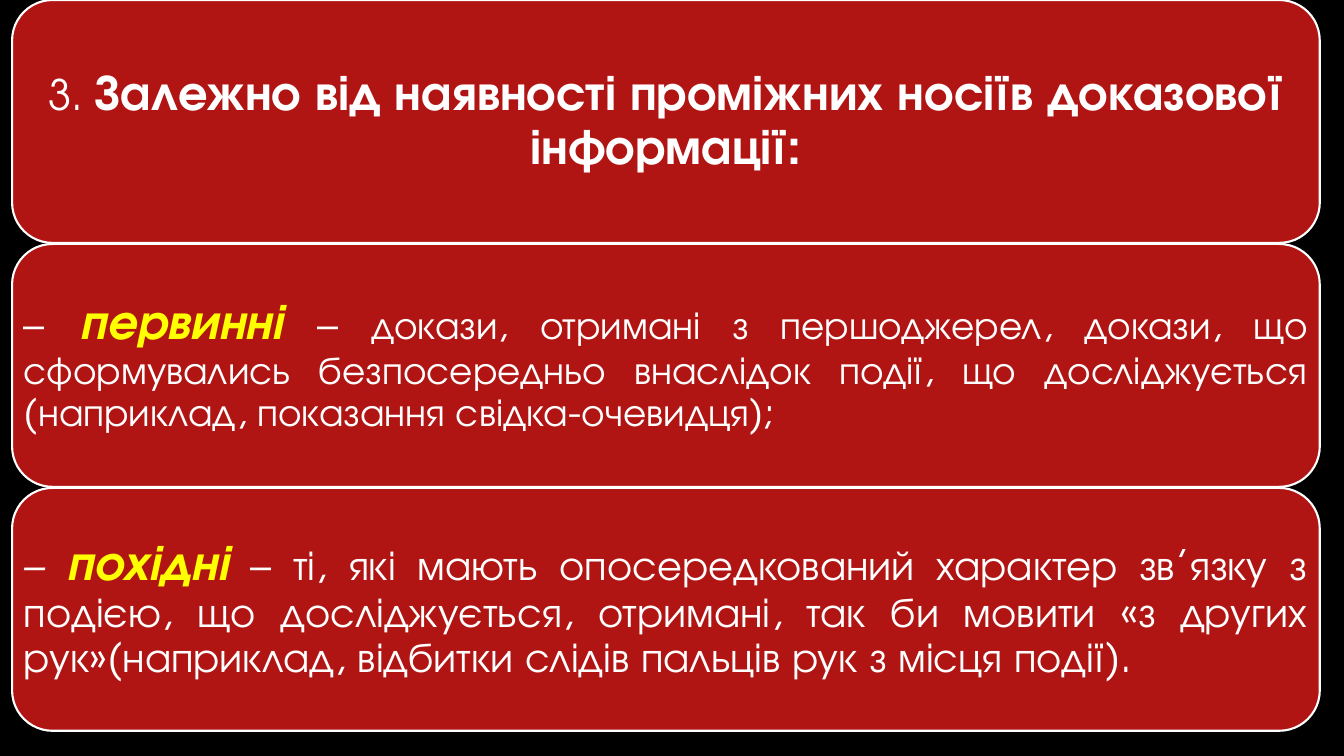
from pptx import Presentation
from pptx.dml.color import RGBColor
from pptx.enum.shapes import MSO_SHAPE
from pptx.enum.text import MSO_ANCHOR, PP_ALIGN
from pptx.util import Inches, Pt

FONT = "TeX Gyre Adventor"
BLACK, RED, WHITE, YELLOW = "000000", "B01513", "FFFFFF", "FFFF00"
LEFT, WIDTH = 0.12, 12.97
ROW_PITCH, ROW_HEIGHT = 2.42, 2.41

PANELS = [
    (PP_ALIGN.CENTER, [
        ("3. ", 30, WHITE, False, False),
        ("Залежно від наявності проміжних носіїв доказової інформації:", 36, WHITE, True, False),
    ]),
    (PP_ALIGN.JUSTIFY, [
        ("–", 30, WHITE, False, False),
        (" ", 36, YELLOW, True, False),
        ("первинні ", 36, YELLOW, True, True),
        ("– ", 30, WHITE, False, False),
        ("докази, отримані з першоджерел, докази, що сформувались безпосередньо "
         "внаслідок події, що досліджується (наприклад, показання свідка-очевидця);",
         28, WHITE, False, False),
    ]),
    (PP_ALIGN.JUSTIFY, [
        ("– ", 30, WHITE, False, True),
        ("похідні", 36, YELLOW, True, True),
        (" – ті, які мають опосередкований характер зв’язку з подією, що досліджується, "
         "отримані, так би мовити «з других рук»(наприклад, відбитки слідів пальців рук "
         "з місця події).", 30, WHITE, False, False),
    ]),
]


def paint(color_format, color):
    color_format.rgb = RGBColor.from_string(color)


def add_run(paragraph, text, size, color, bold, italic):
    run = paragraph.add_run()
    run.text = text
    run.font.name = FONT
    run.font.size = Pt(size)
    run.font.bold = bold
    run.font.italic = italic
    paint(run.font.color, color)


def add_panel(slide, row, alignment, runs):
    shape = slide.shapes.add_shape(
        MSO_SHAPE.ROUNDED_RECTANGLE,
        Inches(LEFT), Inches(row * ROW_PITCH), Inches(WIDTH), Inches(ROW_HEIGHT))
    shape.shadow.inherit = False
    shape.fill.solid()
    paint(shape.fill.fore_color, RED)
    paint(shape.line.color, WHITE)
    shape.line.width = Pt(1.5)

    frame = shape.text_frame
    frame.word_wrap = True
    frame.vertical_anchor = MSO_ANCHOR.MIDDLE
    frame.margin_left = frame.margin_right = 0
    frame.margin_top = frame.margin_bottom = 0
    paragraph = frame.paragraphs[0]
    paragraph.alignment = alignment
    paragraph.line_spacing = 0.9
    for run in runs:
        add_run(paragraph, *run)


def main():
    presentation = Presentation()
    presentation.slide_width = Inches(13.33)
    presentation.slide_height = Inches(7.5)
    slide = presentation.slides.add_slide(presentation.slide_layouts[6])
    slide.background.fill.solid()
    paint(slide.background.fill.fore_color, BLACK)
    for row, (alignment, runs) in enumerate(PANELS):
        add_panel(slide, row, alignment, runs)
    presentation.save("out.pptx")


if __name__ == "__main__":
    main()
